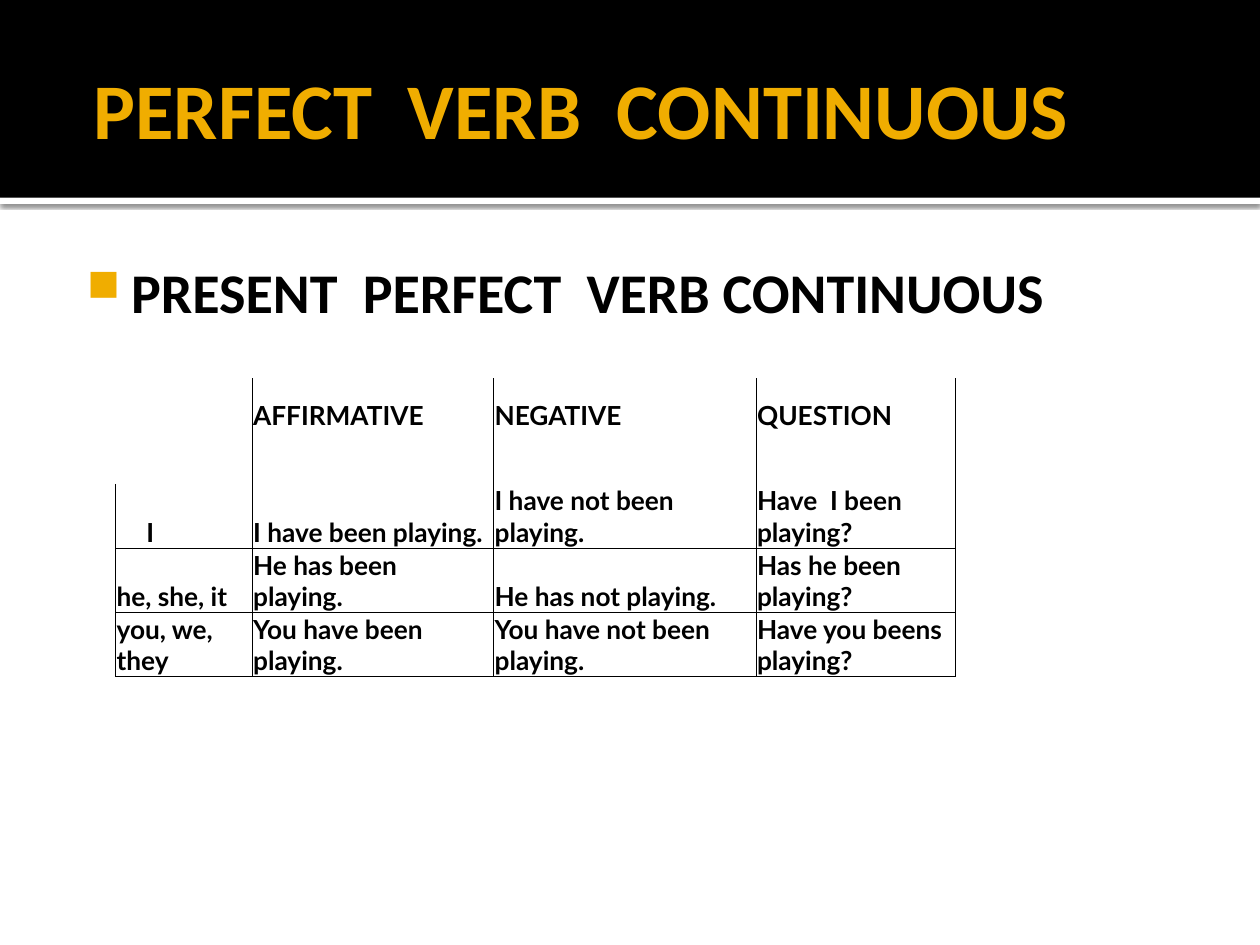
import dataclasses

import pptx
import pptx.dml.color
import pptx.enum.shapes
import pptx.enum.text
import pptx.oxml
import pptx.oxml.ns
import pptx.util

Pt = pptx.util.Pt
RGB = pptx.dml.color.RGBColor
Anchor = pptx.enum.text.MSO_ANCHOR
NS = pptx.oxml.ns.nsdecls("a")


@dataclasses.dataclass(frozen=True)
class Theme:
    black: str = "000000"
    white: str = "FFFFFF"
    gold: str = "F0AD00"
    heading_font: str = "Calibri"
    table_font: str = "Lato"
    title_size: float = 45
    heading_size: float = 32
    table_size: float = 15


THEME = Theme()

COLUMN_WIDTHS = [78, 138, 150, 114]
ROW_HEIGHTS = [30.25, 30.25, 36.7, 36.7, 36.7]
CONJUGATION = [
    ["", "AFFIRMATIVE", "NEGATIVE", "QUESTION"],
    ["", "", "", ""],
    ["I", "I have been playing.", "I have not been playing.", "Have  I been playing?"],
    ["he, she, it", "He has been playing.", "He has not playing.", "Has he been playing?"],
    ["you, we, they", "You have been playing.", "You have not been playing.",
     "Have you beens playing?"],
]
FIRST_PERSON_ROW = 2


def add_band(slide, top, height, color):
    """Full-width rectangle without outline."""
    band = slide.shapes.add_shape(
        pptx.enum.shapes.MSO_SHAPE.RECTANGLE, 0, Pt(top), Pt(720), Pt(height))
    band.shadow.inherit = False
    band.fill.solid()
    band.fill.fore_color.rgb = RGB.from_string(color)
    band.line.fill.background()
    return band


def add_drop_shadow(band):
    effects = band._element.spPr.find(pptx.oxml.ns.qn("a:effectLst"))
    effects.append(pptx.oxml.parse_xml(
        f'<a:outerShdw {NS} blurRad="{Pt(2.5)}" dist="{Pt(0.8)}" dir="5400000" '
        f'algn="tl" rotWithShape="0"><a:srgbClr val="{THEME.black}">'
        '<a:alpha val="60000"/></a:srgbClr></a:outerShdw>'))


def set_margins(box, left, top, right, bottom):
    box.margin_left, box.margin_top = Pt(left), Pt(top)
    box.margin_right, box.margin_bottom = Pt(right), Pt(bottom)


def set_indent(paragraph, left, first=0):
    properties = paragraph._p.get_or_add_pPr()
    properties.set("marL", str(Pt(left)))
    properties.set("indent", str(Pt(first)))
    return properties


def add_run(paragraph, text, font, size, color):
    run = paragraph.add_run()
    run.text = text
    run.font.name = font
    run.font.size = Pt(size)
    run.font.bold = True
    run.font.color.rgb = RGB.from_string(color)


def format_title(slide, text):
    title = slide.shapes.title
    title.left, title.top, title.width, title.height = Pt(36), Pt(12.25), Pt(648), Pt(98.65)
    frame = title.text_frame
    frame.vertical_anchor = Anchor.MIDDLE
    set_margins(frame, 7.2, 3.6, 3.6, 3.6)
    paragraph = frame.paragraphs[0]
    set_indent(paragraph, 10.2)
    paragraph.alignment = pptx.enum.text.PP_ALIGN.LEFT
    add_run(paragraph, text, THEME.heading_font, THEME.title_size, THEME.gold)
    slide.shapes._spTree.append(title._element)  # in front of the bands


def add_bulleted_heading(slide, text):
    heading = slide.shapes.add_textbox(Pt(36), Pt(139.7), Pt(648), Pt(364.3))
    frame = heading.text_frame
    frame.word_wrap = True
    set_margins(frame, 4.3, 7.2, 7.2, 3.6)
    paragraph = frame.paragraphs[0]
    properties = set_indent(paragraph, 34.6, -25.2)
    for bullet in (f'<a:buClr {NS}><a:srgbClr val="{THEME.gold}"/></a:buClr>',
                   f'<a:buSzPct {NS} val="80000"/>',
                   f'<a:buChar {NS} char="■"/>'):
        properties.append(pptx.oxml.parse_xml(bullet))
    add_run(paragraph, text, THEME.heading_font, THEME.heading_size, THEME.black)


def set_borders(cell, visible):
    """Draw the sides named in visible (of L, R, T, B) and hide the others."""
    properties = cell._tc.get_or_add_tcPr()
    for position, side in enumerate("LRTB"):
        fill = (f'<a:solidFill><a:srgbClr val="{THEME.black}"/></a:solidFill>'
                if side in visible else "<a:noFill/>")
        properties.insert(position, pptx.oxml.parse_xml(
            f'<a:ln{side} {NS} w="{Pt(0.5)}">{fill}</a:ln{side}>'))


def visible_sides(row, column):
    if row < FIRST_PERSON_ROW:
        return "R" if column == 0 else "LR"
    return "LRB" if row == FIRST_PERSON_ROW else "LRTB"


def add_conjugation_table(slide):
    table = slide.shapes.add_table(
        len(ROW_HEIGHTS), len(COLUMN_WIDTHS), Pt(66), Pt(216),
        Pt(sum(COLUMN_WIDTHS)), Pt(sum(ROW_HEIGHTS))).table
    table.first_row = False
    table.horz_banding = False
    for column, width in zip(table.columns, COLUMN_WIDTHS):
        column.width = Pt(width)
    for row, height in zip(table.rows, ROW_HEIGHTS):
        row.height = Pt(height)

    for r, texts in enumerate(CONJUGATION):
        for c, text in enumerate(texts):
            cell = table.cell(r, c)
            cell.fill.background()
            cell.vertical_anchor = Anchor.BOTTOM
            set_margins(cell, 0.7, 0.7, 0.7, 0)
            set_borders(cell, visible_sides(r, c))
            if text:
                add_run(cell.text_frame.paragraphs[0], text,
                        THEME.table_font, THEME.table_size, THEME.black)
    pronoun = table.cell(FIRST_PERSON_ROW, 0).text_frame.paragraphs[0]
    set_indent(pronoun, 17)


def main():
    presentation = pptx.Presentation()
    presentation.slide_width, presentation.slide_height = Pt(720), Pt(540)
    slide = presentation.slides.add_slide(presentation.slide_layouts[5])

    # Header: white strip with a shadow below the black band
    add_drop_shadow(add_band(slide, 113, 3.6, THEME.white))
    add_band(slide, 0, 113, THEME.black)
    format_title(slide, "PERFECT  VERB  CONTINUOUS")

    # Content
    add_bulleted_heading(slide, "PRESENT  PERFECT  VERB CONTINUOUS")
    add_conjugation_table(slide)

    presentation.save("out.pptx")


if __name__ == "__main__":
    main()
